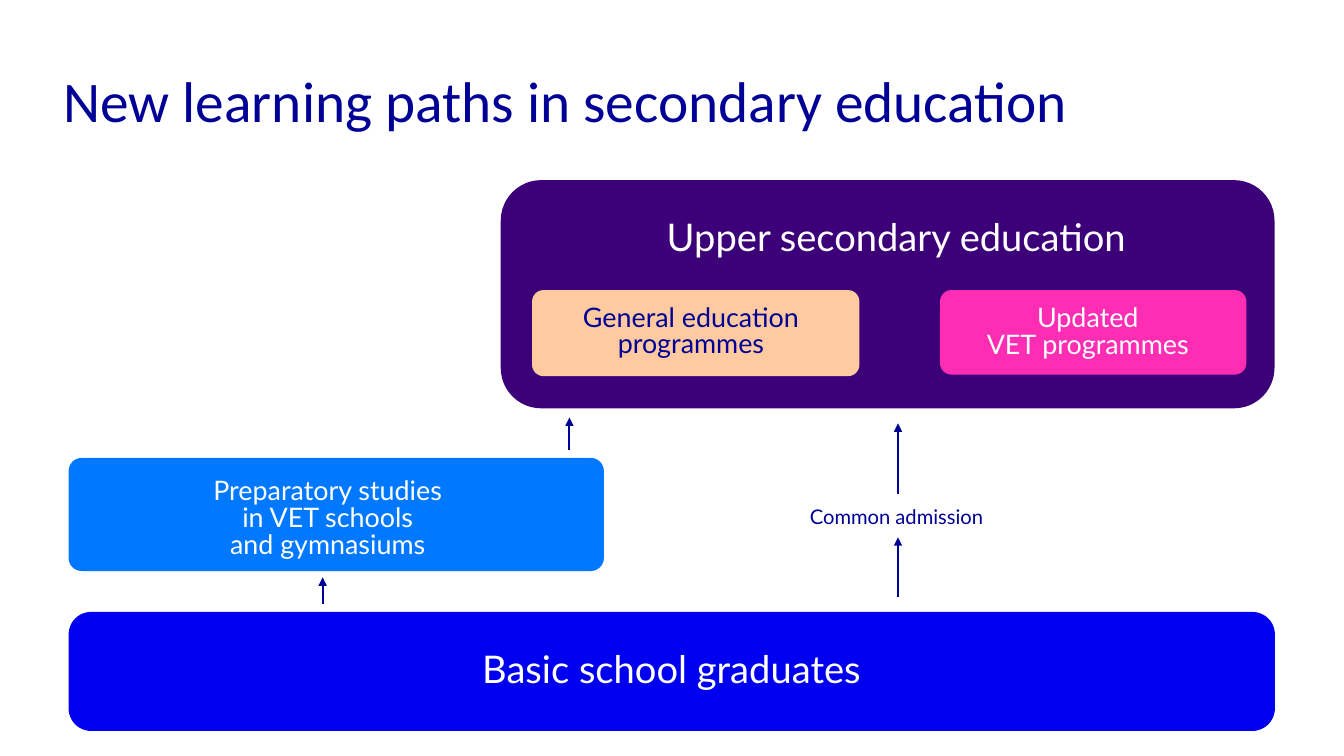
from pptx import Presentation
from pptx.dml.color import RGBColor
from pptx.enum.shapes import MSO_CONNECTOR, MSO_SHAPE
from pptx.enum.text import MSO_ANCHOR, MSO_AUTO_SIZE, PP_ALIGN
from pptx.oxml.ns import qn
from pptx.util import Cm, Pt
from lxml.etree import SubElement

NAVY = RGBColor(0x00, 0x00, 0x96)
PURPLE = RGBColor(0x3C, 0x00, 0x78)
PEACH = RGBColor(0xFF, 0xCA, 0x9F)
PINK = RGBColor(0xFF, 0x2D, 0xB4)
AZURE = RGBColor(0x00, 0x78, 0xFF)
BLUE = RGBColor(0x00, 0x00, 0xF0)
WHITE = RGBColor(0xFF, 0xFF, 0xFF)

PANELS = [
    (12.62, 4.54, 19.5, 5.75, 1.02, PURPLE),
    (13.41, 7.31, 8.25, 2.17, 0.29, PEACH),
    (23.69, 7.31, 7.72, 2.13, 0.29, PINK),
    (1.73, 11.54, 13.49, 2.85, 0.33, AZURE),
    (1.73, 15.42, 30.4, 3.0, 0.57, BLUE),
]
LABELS = [
    (16.05, 5.56, 13.08, 0.97, ["Upper secondary education"], 27.2, 27.2, WHITE),
    (12.4, 7.7, 10.03, 1.35, ["General education", "programmes"], 19.2, 19.2, NAVY),
    (22.4, 7.72, 10.03, 1.35, ["Updated", "VET programmes"], 19.2, 19.2, WHITE),
    (4.07, 12.07, 8.38, 2.03,
     ["Preparatory studies", "in VET schools", "and gymnasiums"], 19.2, 19.2, WHITE),
    (2.36, 16.46, 29.13, 0.97, ["Basic school graduates"], 27.2, 27.2, WHITE),
    (19.61, 12.62, 5.97, 0.66, ["Common admission"], 14.4, 20.1, NAVY),
]
ARROWS = [
    (22.63, 15.04, 13.54),
    (22.63, 12.45, 10.67),
    (14.35, 11.33, 10.52),
    (8.13, 15.21, 14.55),
]


def clear_margins(frame):
    """Let the text of a frame wrap and start at its edges."""
    frame.word_wrap = True
    frame.margin_left = frame.margin_right = 0
    frame.margin_top = frame.margin_bottom = 0


def set_font(paragraph, name, size, color):
    """Give a paragraph its font, size in points and colour."""
    paragraph.font.name = name
    paragraph.font.size = Pt(size)
    paragraph.font.color.rgb = color


def set_title(page, text):
    """Place and format the title placeholder."""
    title = page.shapes.title
    title.left, title.top = Cm(1.6), Cm(1.83)
    title.width, title.height = Cm(31.14), Cm(4.5)
    frame = title.text_frame
    frame.text = text
    clear_margins(frame)
    frame.auto_size = MSO_AUTO_SIZE.NONE
    frame.vertical_anchor = MSO_ANCHOR.TOP
    paragraph = frame.paragraphs[0]
    paragraph.alignment = PP_ALIGN.LEFT
    paragraph.line_spacing = 0.9
    set_font(paragraph, "Calibri", 41, NAVY)


def add_panel(page, left, top, width, height, radius, color):
    """Draw a filled rectangle with corners of the given radius."""
    panel = page.shapes.add_shape(
        MSO_SHAPE.ROUNDED_RECTANGLE, Cm(left), Cm(top), Cm(width), Cm(height))
    panel.adjustments[0] = radius / height
    panel.fill.solid()
    panel.fill.fore_color.rgb = color
    panel.line.fill.background()
    panel.shadow.inherit = False


def add_label(page, left, top, width, height, lines, size, spacing, color):
    """Write centred lines of text, one paragraph each."""
    box = page.shapes.add_textbox(Cm(left), Cm(top), Cm(width), Cm(height))
    frame = box.text_frame
    frame.text = "\n".join(lines)
    clear_margins(frame)
    frame.auto_size = MSO_AUTO_SIZE.SHAPE_TO_FIT_TEXT
    for paragraph in frame.paragraphs:
        paragraph.alignment = PP_ALIGN.CENTER
        paragraph.line_spacing = Pt(spacing)
        set_font(paragraph, "Lato", size, color)


def add_up_arrow(page, center, bottom, top):
    """Draw a vertical arrow that points upwards."""
    arrow = page.shapes.add_connector(
        MSO_CONNECTOR.STRAIGHT, Cm(center), Cm(bottom), Cm(center), Cm(top))
    arrow.line.color.rgb = NAVY
    arrow.line.width = Pt(1.5)
    SubElement(arrow.line._get_or_add_ln(), qn("a:tailEnd"), type="triangle")
    SubElement(arrow._element.spPr, qn("a:effectLst"))


def main():
    """Build the slide and save it."""
    deck = Presentation()
    deck.slide_width, deck.slide_height = Cm(33.87), Cm(19.05)
    page = deck.slides.add_slide(deck.slide_layouts[5])
    set_title(page, "New learning paths in secondary education")
    for panel in PANELS:
        add_panel(page, *panel)
    for label in LABELS:
        add_label(page, *label)
    for arrow in ARROWS:
        add_up_arrow(page, *arrow)
    deck.save("out.pptx")


if __name__ == "__main__":
    main()
